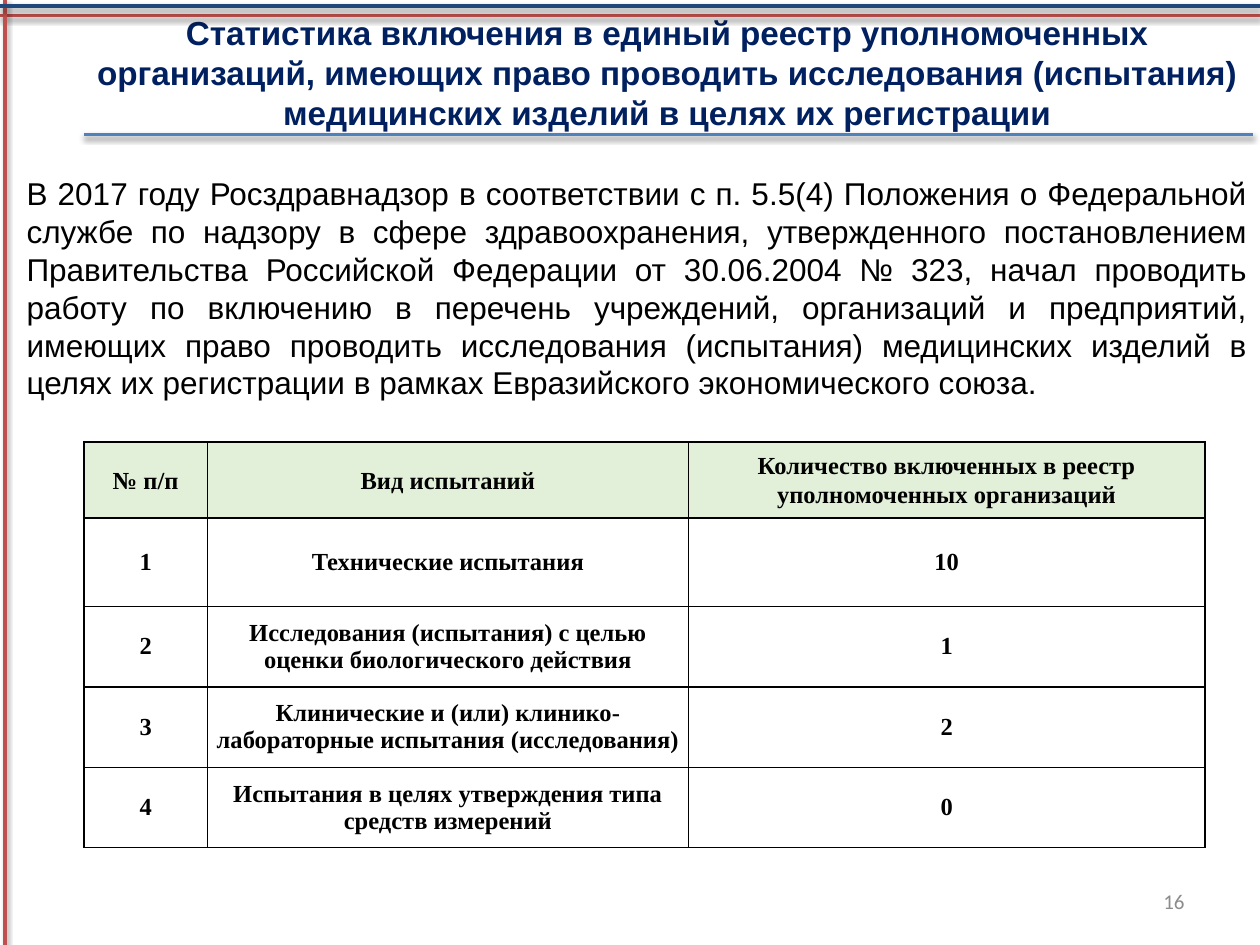
from typing import NamedTuple

from lxml.etree import SubElement
from pptx import Presentation
from pptx.dml.color import RGBColor
from pptx.enum.shapes import MSO_CONNECTOR
from pptx.enum.text import MSO_ANCHOR, MSO_AUTO_SIZE, PP_ALIGN
from pptx.oxml.ns import qn
from pptx.util import Pt

NAVY = RGBColor(0x00, 0x20, 0x60)
DARK_BLUE = RGBColor(0x1F, 0x49, 0x7D)
BLUE = RGBColor(0x4F, 0x81, 0xBD)
RED = RGBColor(0xC0, 0x50, 0x4D)
GRAY = RGBColor(0x8C, 0x8C, 0x8C)
BLACK = RGBColor(0, 0, 0)
LIGHT_GREEN = RGBColor(0xE2, 0xF0, 0xD9)

SLIDE_WIDTH, SLIDE_HEIGHT = 720, 540


class Rule(NamedTuple):
    x1: float
    y1: float
    x2: float
    y2: float
    color: RGBColor


class TestType(NamedTuple):
    number: str
    kind: str
    organizations: str


RULES = [
    Rule(0, 9, SLIDE_WIDTH, 9, RED),
    Rule(3, 0, 3, SLIDE_HEIGHT, RED),
    Rule(0, 3.5, SLIDE_WIDTH, 3.5, DARK_BLUE),
    Rule(48, 77, 716, 77, BLUE),
]

TITLE = (
    "Статистика включения в единый реестр уполномоченных организаций, "
    "имеющих право проводить исследования (испытания) медицинских изделий "
    "в целях их регистрации"
)
INTRODUCTION = (
    "В 2017 году Росздравнадзор в соответствии с п. 5.5(4) Положения о "
    "Федеральной службе по надзору в сфере здравоохранения, утвержденного "
    "постановлением Правительства Российской Федерации от 30.06.2004 № 323, "
    "начал проводить работу по включению в перечень учреждений, организаций "
    "и предприятий, имеющих право проводить исследования (испытания) "
    "медицинских изделий в целях их регистрации в рамках Евразийского "
    "экономического союза."
)
TEST_TYPES = [
    TestType("№ п/п", "Вид испытаний",
             "Количество включенных в реестр уполномоченных организаций"),
    TestType("1", "Технические испытания", "10"),
    TestType("2", "Исследования (испытания) с целью оценки биологического действия", "1"),
    TestType("3", "Клинические и (или) клинико-лабораторные испытания (исследования)", "2"),
    TestType("4", "Испытания в целях утверждения типа средств измерений", "0"),
]
COLUMN_WIDTHS = [70.5, 275, 295]
ROW_HEIGHTS = [43.5, 50.5, 46, 46, 46]


def write(frame, text: str, *, size: float, font: str = "Arial",
          color: RGBColor = BLACK, bold: bool = False,
          align: PP_ALIGN = PP_ALIGN.CENTER, spacing: float = 1.0) -> None:
    frame.word_wrap = True
    paragraph = frame.paragraphs[0]
    paragraph.text = text
    paragraph.alignment = align
    paragraph.line_spacing = spacing
    paragraph.space_before = Pt(0)
    paragraph.font.size = Pt(size)
    paragraph.font.name = font
    paragraph.font.bold = bold
    paragraph.font.color.rgb = color


def place(shape, left: float, top: float, width: float, height: float) -> None:
    shape.left, shape.top = Pt(left), Pt(top)
    shape.width, shape.height = Pt(width), Pt(height)
    shape.text_frame.auto_size = MSO_AUTO_SIZE.NONE
    shape.text_frame.vertical_anchor = MSO_ANCHOR.TOP


def remove_bullet(paragraph) -> None:
    properties = paragraph._p.get_or_add_pPr()
    properties.set("marL", "0")
    properties.set("indent", "0")
    SubElement(properties, qn("a:buNone"))


def draw_rule(slide, rule: Rule) -> None:
    """Draw a straight line with a soft shadow below it."""
    line = slide.shapes.add_connector(
        MSO_CONNECTOR.STRAIGHT, Pt(rule.x1), Pt(rule.y1), Pt(rule.x2), Pt(rule.y2))
    line.line.color.rgb = rule.color
    line.line.width = Pt(2)
    effects = SubElement(line._element.spPr, qn("a:effectLst"))
    shadow = SubElement(effects, qn("a:outerShdw"), blurRad=str(Pt(3.1)),
                        dist=str(Pt(1.6)), dir="5400000", rotWithShape="0")
    shade = SubElement(shadow, qn("a:srgbClr"), val=str(BLACK))
    SubElement(shade, qn("a:alpha"), val="38000")


def add_borders(cell) -> None:
    properties = cell._tc.get_or_add_tcPr()
    for side in ("lnL", "lnR", "lnT", "lnB"):
        border = SubElement(properties, qn(f"a:{side}"), w=str(Pt(1)))
        fill = SubElement(border, qn("a:solidFill"))
        SubElement(fill, qn("a:srgbClr"), val=str(BLACK))


def add_statistics(slide, left: float, top: float) -> None:
    table = slide.shapes.add_table(
        len(TEST_TYPES), len(COLUMN_WIDTHS), Pt(left), Pt(top),
        Pt(sum(COLUMN_WIDTHS)), Pt(sum(ROW_HEIGHTS))).table
    table.first_row = table.horz_banding = False
    for column, width in zip(table.columns, COLUMN_WIDTHS):
        column.width = Pt(width)
    for row, height in zip(table.rows, ROW_HEIGHTS):
        row.height = Pt(height)

    for row_index, test_type in enumerate(TEST_TYPES):
        is_header = row_index == 0
        for column_index, text in enumerate(test_type):
            cell = table.cell(row_index, column_index)
            add_borders(cell)
            if is_header:
                cell.fill.solid()
                cell.fill.fore_color.rgb = LIGHT_GREEN
            else:
                cell.fill.background()
            roomy = is_header or column_index == 0
            cell.margin_left = cell.margin_right = Pt(7.2 if roomy else 4.5)
            cell.margin_top = cell.margin_bottom = Pt(3.6 if roomy else 0)
            cell.vertical_anchor = MSO_ANCHOR.MIDDLE
            write(cell.text_frame, text, size=14, font="Times New Roman",
                  bold=True, spacing=1.07 if is_header else 1.0)


def main() -> None:
    presentation = Presentation()
    presentation.slide_width = Pt(SLIDE_WIDTH)
    presentation.slide_height = Pt(SLIDE_HEIGHT)
    slide = presentation.slides.add_slide(presentation.slide_layouts[1])

    for rule in RULES:
        draw_rule(slide, rule)

    title = slide.shapes.title
    place(title, 42.5, 3.6, 677.5, 99.5)
    write(title.text_frame, TITLE, size=19, color=NAVY, bold=True)

    introduction = slide.placeholders[1]
    place(introduction, 8, 96, 712, 138)
    remove_bullet(introduction.text_frame.paragraphs[0])
    write(introduction.text_frame, INTRODUCTION, size=18, align=PP_ALIGN.JUSTIFY)

    add_statistics(slide, 48, 252.5)

    page_number = slide.shapes.add_textbox(Pt(516), Pt(500.5), Pt(168), Pt(28.5))
    page_number.text_frame.vertical_anchor = MSO_ANCHOR.MIDDLE
    write(page_number.text_frame, "16", size=12, font="Calibri", color=GRAY,
          align=PP_ALIGN.RIGHT)

    presentation.save("out.pptx")


if __name__ == "__main__":
    main()
